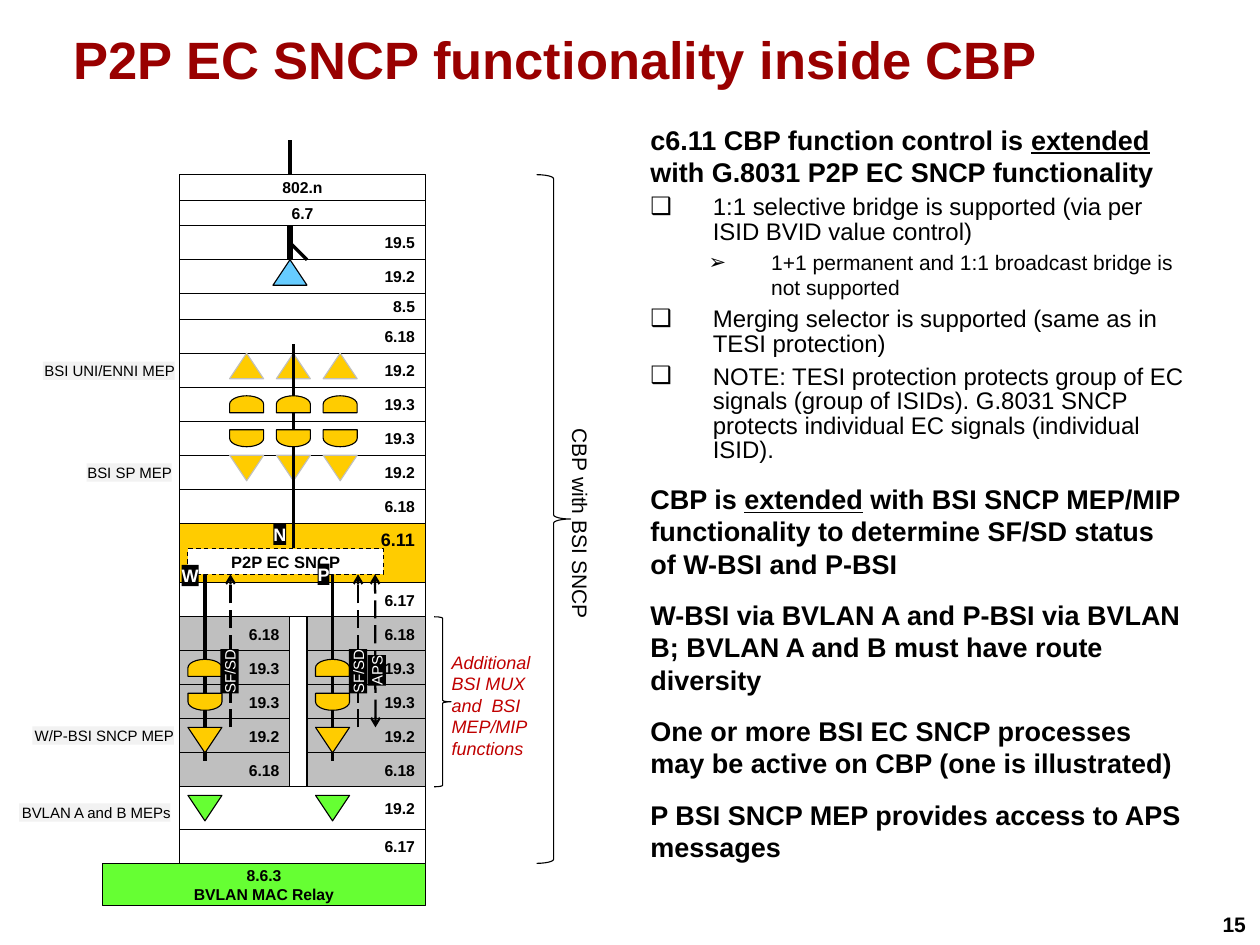
"""Build the slide on P2P EC SNCP functionality inside a CBP."""
from dataclasses import dataclass
from typing import Optional

from lxml import etree
from pptx import Presentation
from pptx import util as u
from pptx.dml.color import RGBColor
from pptx.enum import dml, shapes, text
from pptx.oxml import ns

BLACK = RGBColor(0x00, 0x00, 0x00)
WHITE = RGBColor(0xFF, 0xFF, 0xFF)
AMBER = RGBColor(0xFF, 0xCC, 0x00)
GREEN = RGBColor(0x66, 0xFF, 0x33)
BLUE = RGBColor(0x66, 0xCC, 0xFF)
GREY = RGBColor(0xBF, 0xBF, 0xBF)
PALE = RGBColor(0xF2, 0xF2, 0xF2)
TITLE_RED = RGBColor(0x99, 0x00, 0x00)
NOTE_RED = RGBColor(0xC0, 0x00, 0x00)

Kind = shapes.MSO_SHAPE
Align = text.PP_ALIGN
Anchor = text.MSO_ANCHOR

STACK_LEFT, STACK_TOP, STACK_RIGHT = 4.22, 4.11, 10.01
STACK_WIDTH = STACK_RIGHT - STACK_LEFT
WORKING, PROTECTION = 4.82, 7.82
SERVICES = (5.8, 6.9, 8.0)
ROW = 0.8


@dataclass
class Layer:
    name: str
    height: float = ROW
    fill: Optional[RGBColor] = None
    align: Align = Align.RIGHT
    split: bool = False


@dataclass
class Symbol:
    kind: Kind
    x: float
    y: float
    rotation: int
    fill: RGBColor = AMBER
    line: RGBColor = BLACK


@dataclass
class Line:
    x1: float
    y1: float
    x2: float
    y2: float
    width: float = 2.25
    ends: tuple = ()


@dataclass
class Tag:
    name: str
    x: float
    y: float
    width: float
    height: float = 0.43
    rotation: int = 270
    size: float = 10
    bold: bool = False


@dataclass
class Point:
    runs: tuple
    level: int = 0


LAYERS = [
    Layer("802.n", 0.6, align=Align.CENTER), Layer("6.7", 0.6, align=Align.CENTER),
    Layer("19.5"), Layer("19.2"), Layer("8.5", 0.6), Layer("6.18"), Layer("19.2"),
    Layer("19.3"), Layer("19.3"), Layer("19.2"), Layer("6.18"),
    Layer("6.11", 1.4, AMBER), Layer("6.17"),
    *(Layer(name, fill=GREY, split=True) for name in ("6.18", "19.3", "19.3", "19.2", "6.18")),
    Layer("19.2", 1.0), Layer("6.17"),
]
TRIANGLES = [
    Symbol(Kind.ISOSCELES_TRIANGLE, 6.82, 6.41, 0, BLUE),
    *(Symbol(Kind.ISOSCELES_TRIANGLE, x, y, rotation, line=GREY)
      for x in SERVICES for y, rotation in ((8.61, 0), (11.01, 180))),
]
OVERLAYS = [
    *(Symbol(Kind.FLOWCHART_DELAY, x, y, rotation)
      for x in SERVICES for y, rotation in ((9.51, 270), (10.31, 90))),
    *(Symbol(Kind.FLOWCHART_DELAY, x, y, rotation)
      for x in (WORKING, PROTECTION) for y, rotation in ((15.71, 270), (16.51, 90))),
    *(Symbol(Kind.ISOSCELES_TRIANGLE, x, y, 180, fill)
      for x in (WORKING, PROTECTION) for y, fill in ((17.41, AMBER), (19.01, GREEN))),
]
LINES = [
    Line(6.82, 4.11, 6.82, 3.3, 3), Line(6.82, 6.11, 6.82, 5.31, 4.5),
    Line(6.82, 5.71, 7.22, 6.11), Line(6.9, 8.1, 6.9, 12.9),
    *(Line(x, 13.51, x, 17.91) for x in (WORKING, PROTECTION)),
]
SIGNALS = [
    *(Line(x, 17.11, x, 13.51, 1.5, ("tailEnd",)) for x in (5.42, 8.42)),
    Line(8.83, 17.11, 8.82, 13.51, 1.5, ("headEnd", "tailEnd")),
]
TAGS = [
    Tag("N", 6.58, 12.57, 0.3, 0.5, 0, 12, True), Tag("W", 4.47, 13.54, 0.4, 0.5, 0, 12, True),
    Tag("P", 7.61, 13.51, 0.28, 0.5, 0, 12, True), Tag("SF/SD", 5.4, 15.79, 1.04),
    Tag("SF/SD", 8.42, 15.79, 1.04), Tag("APS", 8.86, 15.77, 0.72),
]
SIDE_LABELS = [
    ("BSI UNI/ENNI MEP", 4.11, 8.51, 3.1), ("BSI SP MEP", 4.04, 10.9, 2.0),
    ("W/P-BSI SNCP MEP", 4.09, 17.09, 3.33), ("BVLAN A and B MEPs", 4.01, 18.9, 3.56),
]
POINTS = [
    Point(("c6.11 CBP function control is ", "extended", " with G.8031 P2P EC SNCP functionality")),
    Point(("1:1 selective bridge is supported (via per ISID BVID value control)",), 1),
    Point(("1+1 permanent and 1:1 broadcast bridge is not supported",), 2),
    Point(("Merging selector is supported (same as in TESI protection)",), 1),
    Point(("NOTE: TESI protection protects group of EC signals (group of ISIDs). G.8031 SNCP "
           "protects individual EC signals (individual ISID).",), 1),
    Point(("CBP is ", "extended", " with BSI SNCP MEP/MIP functionality to determine SF/SD "
           "status of W-BSI and P-BSI")),
    Point(("W-BSI via BVLAN A and P-BSI via BVLAN B; BVLAN A and B must have route diversity",)),
    Point(("One or more BSI EC SNCP processes may be active on CBP (one is illustrated)",)),
    Point(("P BSI SNCP MEP provides access to APS messages",)),
]
LEVELS = [(18, 12.6, 1.0, 0, 0, None), (16, 5.6, 0.85, 1.47, -1.47, "❑"),
          (14, 2.8, 1.0, 2.84, -1.47, "➢")]


def write(paragraph, content: str, *, size: float = 10.5, bold: bool = False, italic: bool = False,
          underline: bool = False, color: RGBColor = BLACK, align: Align = Align.LEFT) -> None:
    paragraph.alignment = align
    run = paragraph.add_run()
    run.text = content
    font = run.font
    font.name, font.size = "Arial", u.Pt(size)
    font.bold, font.italic, font.underline = bold, italic, underline
    font.color.rgb = color


def fill_frame(frame, content: str, anchor: Anchor, wrap: bool, inset: bool, **style) -> None:
    frame.word_wrap, frame.vertical_anchor = wrap, anchor
    if not inset:
        frame.margin_left = frame.margin_right = frame.margin_top = frame.margin_bottom = 0
    for index, part in enumerate(content.split("\n")):
        write(frame.add_paragraph() if index else frame.paragraphs[0], part, **style)


def place(owner, left: float, top: float, width: float, height: float) -> None:
    owner.left, owner.top, owner.width, owner.height = map(u.Cm, (left, top, width, height))


def draw_shape(slide, kind: Kind, left: float, top: float, width: float, height: float,
               fill: Optional[RGBColor] = None, line: Optional[RGBColor] = BLACK,
               rotation: int = 0, content: str = "", anchor: Anchor = Anchor.MIDDLE,
               wrap: bool = True, inset: bool = True, **style):
    shape = slide.shapes.add_shape(kind, *map(u.Cm, (left, top, width, height)))
    shape.shadow.inherit = False
    shape.rotation = rotation
    for paint, color in ((shape.fill, fill), (shape.line.fill, line)):
        if color is None:
            paint.background()
        else:
            paint.solid()
            paint.fore_color.rgb = color
    shape.line.width = u.Pt(0.75)
    if content:
        fill_frame(shape.text_frame, content, anchor, wrap, inset, **style)
    return shape


def draw_symbol(slide, symbol: Symbol) -> None:
    width, height = (0.4, 0.8) if symbol.kind == Kind.FLOWCHART_DELAY else (0.8, 0.6)
    draw_shape(slide, symbol.kind, symbol.x - width / 2, symbol.y - height / 2, width, height,
               symbol.fill, symbol.line, symbol.rotation)


def draw_line(slide, line: Line) -> None:
    connector = slide.shapes.add_connector(
        shapes.MSO_CONNECTOR.STRAIGHT, *map(u.Cm, (line.x1, line.y1, line.x2, line.y2)))
    connector.line.width = u.Pt(line.width)
    connector.line.color.rgb = BLACK
    if line.ends:
        connector.line.dash_style = dml.MSO_LINE.LONG_DASH
    for end in line.ends:
        etree.SubElement(connector.line._get_or_add_ln(), ns.qn(f"a:{end}"), type="arrow")
    etree.SubElement(connector._element.spPr, ns.qn("a:effectLst"))


def draw_text(slide, left: float, top: float, width: float, height: float, content: str,
              wrap: bool = False, inset: bool = True, rotation: int = 0, **style) -> None:
    box = slide.shapes.add_textbox(*map(u.Cm, (left, top, width, height)))
    box.rotation = rotation
    fill_frame(box.text_frame, content, Anchor.TOP, wrap, inset, **style)


def draw_layers(slide) -> None:
    top = STACK_TOP
    for layer in LAYERS:
        spans = ((STACK_LEFT, 2.6), (7.22, 2.79)) if layer.split else ((STACK_LEFT, STACK_WIDTH),)
        tall = layer.name == "6.11"
        for left, width in spans:
            draw_shape(slide, Kind.RECTANGLE, left, top, width, layer.height, layer.fill,
                       content=layer.name, anchor=Anchor.TOP if tall else Anchor.MIDDLE,
                       inset=layer.align == Align.RIGHT, size=12 if tall else 10.5, bold=True,
                       align=layer.align)
        top += layer.height
    draw_shape(slide, Kind.RECTANGLE, 2.41, top, STACK_RIGHT - 2.41, 1, GREEN,
               content="8.6.3\nBVLAN MAC Relay", bold=True, align=Align.CENTER)


def fill_body(body) -> None:
    place(body, 15.04, 2.77, 13.13, 17.73)
    frame = body.text_frame
    frame.auto_size, frame.vertical_anchor = text.MSO_AUTO_SIZE.NONE, Anchor.TOP
    for index, point in enumerate(POINTS):
        paragraph = frame.add_paragraph() if index else frame.paragraphs[0]
        size, before, spacing, margin, indent, bullet = LEVELS[point.level]
        paragraph.level = point.level
        paragraph.space_before, paragraph.line_spacing = u.Pt(before), spacing
        properties = paragraph._p.get_or_add_pPr()
        properties.set("marL", str(u.Cm(margin)))
        properties.set("indent", str(u.Cm(indent)))
        if bullet:
            etree.SubElement(properties, ns.qn("a:buFont"), typeface="Arial")
            etree.SubElement(properties, ns.qn("a:buChar"), char=bullet)
        else:
            etree.SubElement(properties, ns.qn("a:buNone"))
        for content in point.runs:
            write(paragraph, content, size=size, bold=point.level == 0,
                  underline=content == "extended")


def main() -> None:
    presentation = Presentation()
    presentation.slide_width, presentation.slide_height = u.Cm(29.63), u.Cm(22.23)
    slide = presentation.slides.add_slide(presentation.slide_layouts[1])
    title = slide.shapes.title
    place(title, 1.47, 0.51, 26.67, 2.79)
    title.text_frame.auto_size = text.MSO_AUTO_SIZE.NONE
    fill_frame(title.text_frame, "P2P EC SNCP functionality inside CBP", Anchor.TOP, True, True,
               size=35, bold=True, color=TITLE_RED)
    fill_body(slide.placeholders[1])
    draw_layers(slide)
    for symbol in TRIANGLES:
        draw_symbol(slide, symbol)
    for line in LINES:
        draw_line(slide, line)
    for symbol in OVERLAYS:
        draw_symbol(slide, symbol)
    process = draw_shape(slide, Kind.RECTANGLE, 4.42, 12.91, 4.6, 0.6, WHITE, wrap=False,
                         content="P2P EC SNCP", size=11, bold=True, align=Align.CENTER)
    process.line.dash_style = dml.MSO_LINE.DASH
    for line in SIGNALS:
        draw_line(slide, line)
    for tag in TAGS:
        draw_shape(slide, Kind.RECTANGLE, tag.x - tag.width / 2, tag.y - tag.height / 2, tag.width,
                   tag.height, BLACK, None, tag.rotation, tag.name, wrap=False, inset=False,
                   size=tag.size, bold=tag.bold, color=WHITE, align=Align.CENTER)
    for name, right, top, width in SIDE_LABELS:
        draw_shape(slide, Kind.RECTANGLE, right - width, top, width, 0.43, PALE, None,
                   content=name, wrap=False, inset=False, size=10, align=Align.RIGHT)
    draw_shape(slide, Kind.RIGHT_BRACE, 10.21, 14.51, 0.4, 4)
    brace = draw_shape(slide, Kind.RIGHT_BRACE, 12.62, STACK_TOP, 0.8, 16.2)
    brace.adjustments[0] = 0.12
    draw_text(slide, 11.05, 11.89, 5.18, 0.86, "CBP with BSI SNCP", rotation=90, size=14,
              align=Align.CENTER)
    draw_text(slide, 10.62, 15.32, 2.39, 2.57, "Additional BSI MUX and  BSI MEP/MIP functions",
              wrap=True, inset=False, size=12, italic=True, color=NOTE_RED)
    draw_text(slide, 28.5, 21.31, 1.12, 0.86, "15", size=14, bold=True)
    presentation.save("out.pptx")


if __name__ == "__main__":
    main()
